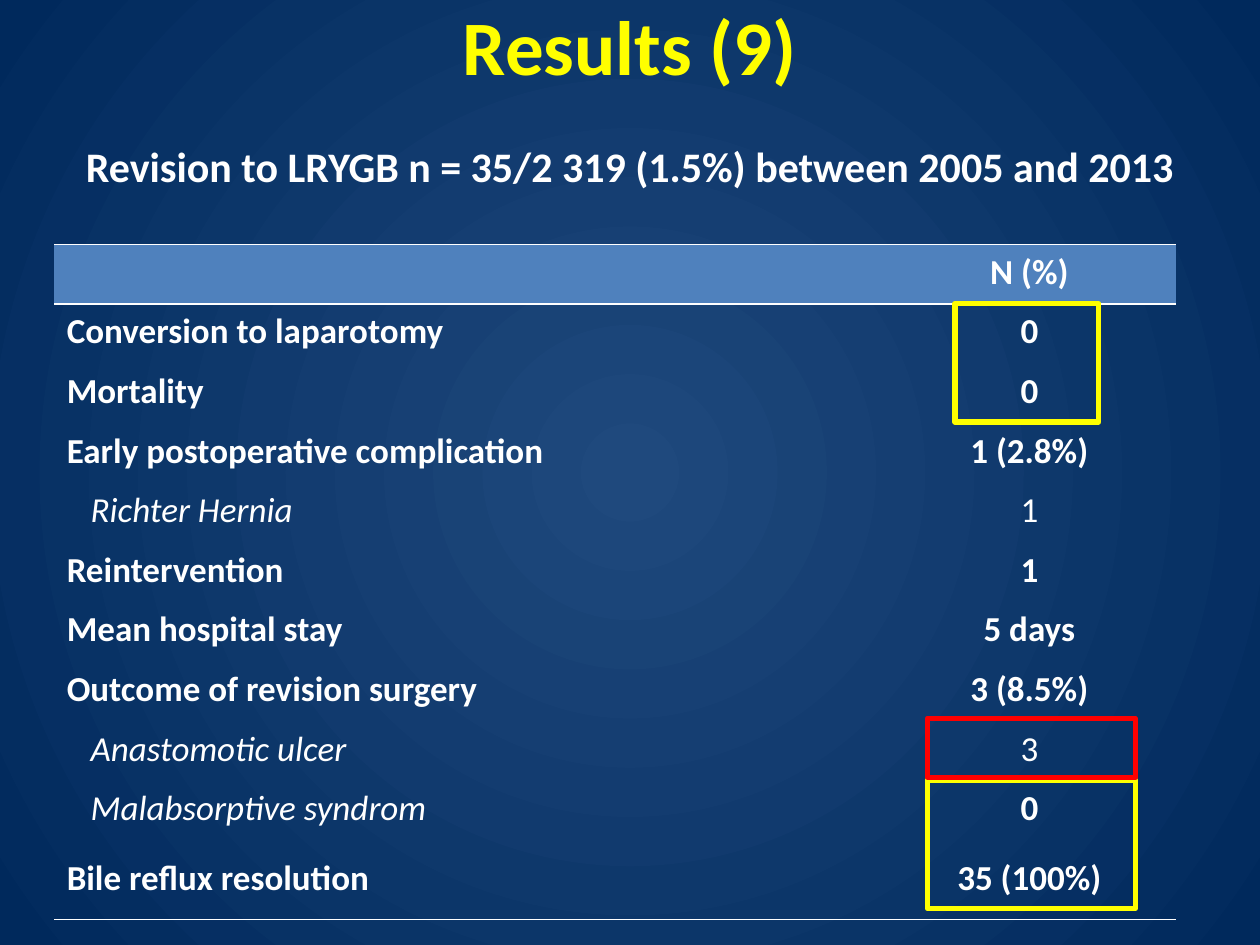
"""Build the Results (9) slide: an outcome table with highlighted values."""
from typing import NamedTuple

from lxml import etree
from pptx import Presentation
from pptx.dml.color import RGBColor
from pptx.enum.shapes import MSO_SHAPE
from pptx.enum.text import MSO_ANCHOR, PP_ALIGN
from pptx.oxml import parse_xml
from pptx.oxml.ns import nsdecls, qn
from pptx.util import Inches, Pt

WHITE = RGBColor(0xFF, 0xFF, 0xFF)
YELLOW = RGBColor(0xFF, 0xFF, 0x00)
RED = RGBColor(0xFF, 0x00, 0x00)
BLUE = RGBColor(0x4F, 0x81, 0xBD)
BG_INNER = RGBColor(0x1F, 0x49, 0x7D)
BG_OUTER = RGBColor(0x00, 0x29, 0x5C)
FONT = "Calibri"
CENTER, LEFT = PP_ALIGN.CENTER, PP_ALIGN.LEFT
MIDDLE = MSO_ANCHOR.MIDDLE
RECTANGLE = MSO_SHAPE.RECTANGLE

TABLE_LEFT, TABLE_TOP, TABLE_HEIGHT = 0.43, 1.94, 5.36
COL_WIDTHS = (6.58, 2.32)
TALL_ROWS, TALL_HEIGHT = 2, 0.55


class Row(NamedTuple):
    label: str
    value: str
    detail: bool = False
    value_bold: bool = True


class Box(NamedTuple):
    left: float
    top: float
    width: float
    height: float
    color: RGBColor


ROWS = (
    Row("", "N (%)"),
    Row("Conversion to laparotomy", "0"),
    Row("Mortality", "0"),
    Row("Early postoperative complication", "1 (2.8%)"),
    Row("Richter Hernia", "1", True, False),
    Row("Reintervention", "1"),
    Row("Mean hospital stay", "5 days"),
    Row("Outcome of revision surgery", "3 (8.5%)"),
    Row("Anastomotic ulcer", "3", True, False),
    Row("Malabsorptive syndrom", "0", True),
    Row("Bile reflux resolution", "35 (100%)"),
)
HIGHLIGHTS = (
    Box(7.58, 2.41, 1.14, 0.94, YELLOW),
    Box(7.36, 6.19, 1.65, 1.02, YELLOW),
    Box(7.36, 5.7, 1.65, 0.47, RED),
)


def set_background(s) -> None:
    """Fill the slide with a circular gradient."""
    s.background.fill.solid()
    bg_pr = s._element.cSld.bg.bgPr
    bg_pr.replace(bg_pr[0], parse_xml(
        f'<a:gradFill {nsdecls("a")} rotWithShape="1"><a:gsLst>'
        f'<a:gs pos="0"><a:srgbClr val="{BG_INNER}"/></a:gs>'
        f'<a:gs pos="100000"><a:srgbClr val="{BG_OUTER}"/></a:gs></a:gsLst>'
        '<a:path path="circle"><a:fillToRect l="50000" t="50000" r="50000" b="50000"/></a:path>'
        '</a:gradFill>'))


def write(tf, text: str, size: float, color: RGBColor = WHITE, align=CENTER,
          bold: bool = True, italic: bool = False) -> None:
    """Add one styled run to the first paragraph."""
    p = tf.paragraphs[0]
    p.alignment = align
    r = p.add_run()
    r.text = text
    r.font.name, r.font.size = FONT, Pt(size)
    r.font.bold, r.font.italic = bold, italic
    r.font.color.rgb = color


def add_heading(s, top: float, height: float, text: str, size: float, color: RGBColor) -> None:
    """Add a centred heading across the slide."""
    tf = s.shapes.add_textbox(0, Inches(top), Inches(10), Inches(height)).text_frame
    tf.word_wrap = True
    tf.vertical_anchor = MIDDLE
    write(tf, text, size, color)


def set_borders(cell, ruled: str) -> None:
    """Draw white rules on the named edges and none on the others."""
    tc_pr = cell._tc.get_or_add_tcPr()
    for edge in "LRTB":
        ln = etree.SubElement(tc_pr, qn(f"a:ln{edge}"), w=str(Pt(1)))
        if edge in ruled:
            fill = etree.SubElement(ln, qn("a:solidFill"))
            etree.SubElement(fill, qn("a:srgbClr"), val=str(WHITE))
        else:
            etree.SubElement(ln, qn("a:noFill"))


def add_results(s) -> None:
    """Add the table of outcomes."""
    table = s.shapes.add_table(len(ROWS), len(COL_WIDTHS), Inches(TABLE_LEFT), Inches(TABLE_TOP),
                               Inches(sum(COL_WIDTHS)), Inches(TABLE_HEIGHT)).table
    for column, width in zip(table.columns, COL_WIDTHS):
        column.width = Inches(width)
    normal_rows = len(ROWS) - TALL_ROWS
    normal_height = (TABLE_HEIGHT - TALL_ROWS * TALL_HEIGHT) / normal_rows
    edges = {0: "TB", 1: "T", len(ROWS) - 1: "B"}
    for i, row in enumerate(ROWS):
        table.rows[i].height = Inches(normal_height if i < normal_rows else TALL_HEIGHT)
        label, value = table.cell(i, 0), table.cell(i, 1)
        for cell in (label, value):
            set_borders(cell, edges.get(i, ""))
            if i == 0:
                cell.fill.solid()
                cell.fill.fore_color.rgb = BLUE
            else:
                cell.fill.background()
        if row.detail:
            label.margin_left = Inches(0.29)
        write(label.text_frame, row.label, 20, align=LEFT, bold=not row.detail, italic=row.detail)
        write(value.text_frame, row.value, 20, bold=row.value_bold)


def add_highlight(s, box: Box) -> None:
    """Outline a group of values."""
    sp = s.shapes.add_shape(RECTANGLE, *map(Inches, box[:4]))
    sp.shadow.inherit = False
    sp.fill.background()
    sp.line.color.rgb = box.color
    sp.line.width = Pt(3)


def main() -> None:
    """Build and save the slide."""
    prs = Presentation()
    prs.slide_width, prs.slide_height = Inches(10), Inches(7.5)
    s = prs.slides.add_slide(prs.slide_layouts[6])
    set_background(s)
    add_results(s)
    add_heading(s, 0.92, 0.79, "Revision to LRYGB n = 35/2 319 (1.5%) between 2005 and 2013", 24, WHITE)
    add_heading(s, -0.27, 1.25, "Results (9)", 44, YELLOW)
    for box in HIGHLIGHTS:
        add_highlight(s, box)
    prs.save("out.pptx")


if __name__ == "__main__":
    main()
